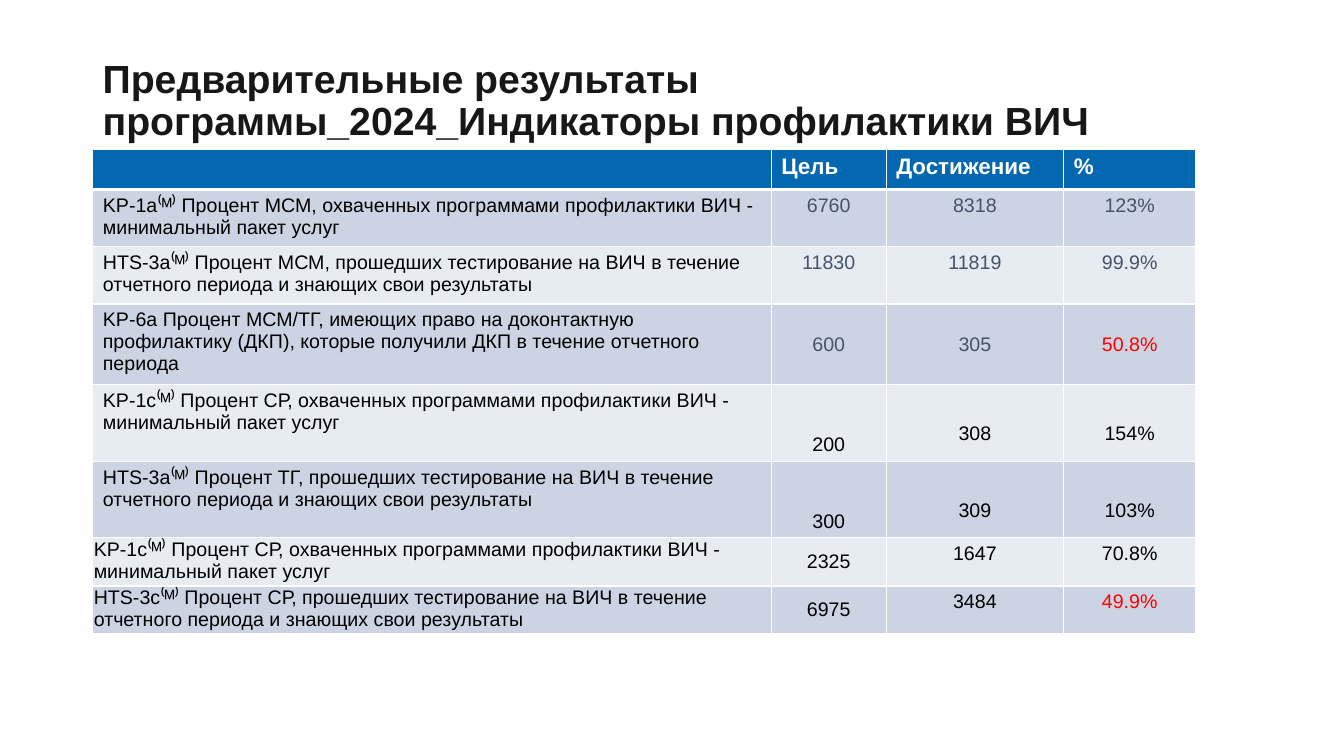
from dataclasses import dataclass

import pptx
import pptx.dml.color
import pptx.enum.text
import pptx.oxml.ns
import pptx.util
from lxml import etree

Inches = pptx.util.Inches
Anchor = pptx.enum.text.MSO_ANCHOR
Align = pptx.enum.text.PP_ALIGN


@dataclass(frozen=True)
class Theme:
    font: str = "Arial"
    title_size: int = 28
    header_size: int = 16
    body_size: int = 14
    title: str = "181717"
    white: str = "FFFFFF"
    header: str = "0468B1"
    bands: tuple = ("CCD4E4", "E7EBF2")
    black: str = "000000"
    muted: str = "44546A"
    alert: str = "FF0000"


@dataclass(frozen=True)
class Placement:
    anchor: Anchor = Anchor.TOP
    margins: tuple = (0.1, 0.05, 0.1, 0.05)


THEME = Theme()
PADDED = Placement()
BOTTOM = Placement(Anchor.BOTTOM)
TIGHT = Placement(margins=(0.01, 0.01, 0.01, 0))
CENTERED = Placement(Anchor.MIDDLE, (0, 0, 0, 0))
LOWERED = Placement(Anchor.MIDDLE, (0.01, 0.22, 0.01, 0))

TITLE = "Предварительные результаты программы_2024_Индикаторы профилактики ВИЧ"
HEADERS = ("", "Цель", "Достижение", "%")
COLUMN_WIDTHS = (6.73, 1.14, 1.76, 1.31)
HEADER_HEIGHT = 0.37
PACKAGE = "охваченных программами профилактики ВИЧ - минимальный пакет услуг"
TESTING = "прошедших тестирование на ВИЧ в течение отчетного периода и знающих свои результаты"
PREP = ("KP-6a Процент МСМ/ТГ, имеющих право на доконтактную профилактику (ДКП), "
        "которые получили ДКП в течение отчетного периода")

ALL_PADDED = (PADDED,) * 4
PREP_ROW = (PADDED,) + (CENTERED,) * 3
TALL_ROW = (PADDED, BOTTOM, LOWERED, LOWERED)
TIGHT_ROW = (TIGHT, CENTERED, PADDED, PADDED)
MUTED = (THEME.black,) + (THEME.muted,) * 3
MUTED_ALERT = MUTED[:3] + (THEME.alert,)
BLACK = (THEME.black,) * 4
BLACK_ALERT = BLACK[:3] + (THEME.alert,)

INDICATORS = (
    (0.54, ALL_PADDED, MUTED, (f"KP-1a⁽ᴹ⁾ Процент МСМ, {PACKAGE}", "6760", "8318", "123%")),
    (0.54, ALL_PADDED, MUTED, (f"HTS-3a⁽ᴹ⁾ Процент МСМ, {TESTING}", "11830", "11819", "99.9%")),
    (0.76, PREP_ROW, MUTED_ALERT, (PREP, "600", "305", "50.8%")),
    (0.76, TALL_ROW, BLACK, (f"KP-1c⁽ᴹ⁾ Процент СР, {PACKAGE}", "200", "308", "154%")),
    (0.76, TALL_ROW, BLACK, (f"HTS-3a⁽ᴹ⁾ Процент ТГ, {TESTING}", "300", "309", "103%")),
    (0.44, TIGHT_ROW, BLACK, (f"KP-1c⁽ᴹ⁾ Процент СР, {PACKAGE}", "2325", "1647", "70.8%")),
    (0.44, TIGHT_ROW, BLACK_ALERT, (f"HTS-3c⁽ᴹ⁾ Процент СР, {TESTING}", "6975", "3484", "49.9%")),
)


def rgb(color):
    return pptx.dml.color.RGBColor.from_string(color)


def add_run(paragraph, text, size, color, bold=False):
    run = paragraph.add_run()
    run.text = text
    run.font.name = THEME.font
    run.font.size = pptx.util.Pt(size)
    run.font.bold = bold
    run.font.color.rgb = rgb(color)


def add_borders(cell, widths):
    properties = cell._tc.get_or_add_tcPr()
    for side, width in zip(("lnL", "lnR", "lnT", "lnB"), widths):
        line = etree.SubElement(properties, pptx.oxml.ns.qn(f"a:{side}"), w=str(pptx.util.Pt(width)))
        fill = etree.SubElement(line, pptx.oxml.ns.qn("a:solidFill"))
        etree.SubElement(fill, pptx.oxml.ns.qn("a:srgbClr"), val=THEME.white)


def style_cell(cell, fill, placement, border_widths):
    add_borders(cell, border_widths)
    cell.fill.solid()
    cell.fill.fore_color.rgb = rgb(fill)
    cell.vertical_anchor = placement.anchor
    (cell.margin_left, cell.margin_top,
     cell.margin_right, cell.margin_bottom) = map(Inches, placement.margins)


def add_title(slide, left, top, width, height):
    shape = slide.shapes.add_textbox(*map(Inches, (left, top, width, height)))
    frame = shape.text_frame
    frame.word_wrap = True
    frame.vertical_anchor = Anchor.BOTTOM
    paragraph = frame.paragraphs[0]
    paragraph.line_spacing = 0.9
    add_run(paragraph, TITLE, THEME.title_size, THEME.title, bold=True)


def add_indicator_table(slide, left, top):
    heights = (HEADER_HEIGHT,) + tuple(row[0] for row in INDICATORS)
    box = (left, top, sum(COLUMN_WIDTHS), sum(heights))
    table = slide.shapes.add_table(len(heights), len(COLUMN_WIDTHS), *map(Inches, box)).table
    for column, width in zip(table.columns, COLUMN_WIDTHS):
        column.width = Inches(width)
    for row, height in zip(table.rows, heights):
        row.height = Inches(height)

    for column, text in enumerate(HEADERS):
        cell = table.cell(0, column)
        style_cell(cell, THEME.header, PADDED, (1, 1, 1, 3))
        if text:
            add_run(cell.text_frame.paragraphs[0], text, THEME.header_size, THEME.white, bold=True)

    for row, (_, placements, colors, texts) in enumerate(INDICATORS, start=1):
        top_border = 3 if row == 1 else 1
        for column, (placement, color, text) in enumerate(zip(placements, colors, texts)):
            cell = table.cell(row, column)
            style_cell(cell, THEME.bands[(row - 1) % 2], placement, (1, 1, top_border, 1))
            paragraph = cell.text_frame.paragraphs[0]
            paragraph.alignment = Align.CENTER if column else Align.LEFT
            add_run(paragraph, text, THEME.body_size, color)


def main():
    presentation = pptx.Presentation()
    presentation.slide_width = Inches(13.33)
    presentation.slide_height = Inches(7.5)
    slide = presentation.slides.add_slide(presentation.slide_layouts[6])
    add_title(slide, 0.92, 0.4, 11.5, 1.08)
    add_indicator_table(slide, 0.92, 1.48)
    presentation.save("out.pptx")


if __name__ == "__main__":
    main()
